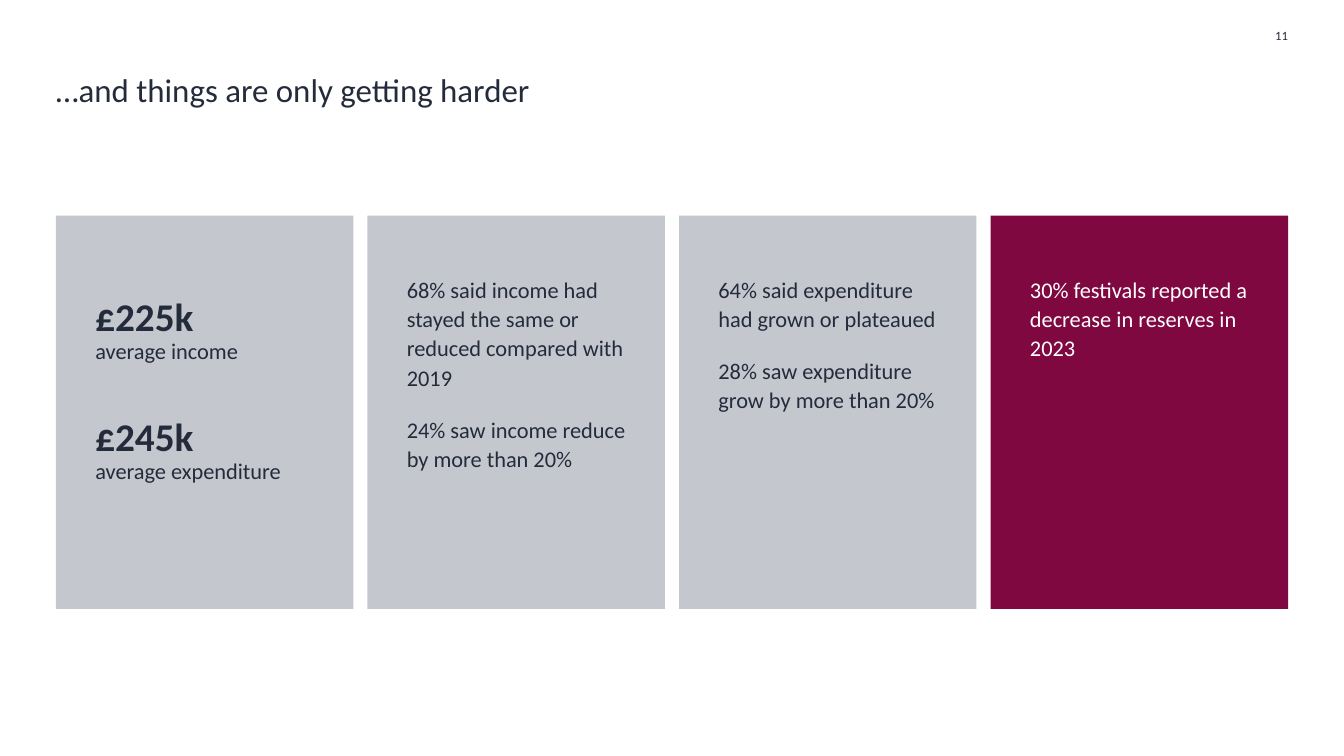
import pptx
import pptx.util
import pptx.dml.color
import pptx.enum.text
from lxml import etree

Inches, Pt = pptx.util.Inches, pptx.util.Pt
RGBColor = pptx.dml.color.RGBColor
PP_ALIGN, MSO_ANCHOR = pptx.enum.text.PP_ALIGN, pptx.enum.text.MSO_ANCHOR

INK = RGBColor(0x24, 0x2B, 0x3B)
GREY = RGBColor(0xC4, 0xC8, 0xCE)
PLUM = RGBColor(0x7E, 0x08, 0x3F)
WHITE = RGBColor(0xFF, 0xFF, 0xFF)

SLIDE_W, SLIDE_H = 13.33, 7.5
LEFT, CONTENT_W = 0.555, 12.22
CARD_TOP, CARD_H, GAP = 2.14, 3.9, 0.14

FIGURE = dict(size=28, bold=True, line=34, before=34)
LABEL = dict(size=16, bold=False, line=18, before=0)
POINT = dict(size=16, bold=False, line=21, before=16)

CARDS = [
    (GREY, INK, 0.75, [("£225k", FIGURE), ("average income", LABEL),
                       ("£245k", FIGURE), ("average expenditure", LABEL)]),
    (GREY, INK, 0.57, [
        ("68% said income had stayed the same or reduced compared with 2019", POINT),
        ("24% saw income reduce by more than 20%", POINT)]),
    (GREY, INK, 0.57, [
        ("64% said expenditure had grown or plateaued", POINT),
        ("28% saw expenditure grow by more than 20%", POINT)]),
    (PLUM, WHITE, 0.57, [
        ("30% festivals reported a decrease in reserves in 2023", POINT)]),
]


def set_all(obj, values):
    """Set each attribute named in a dict."""
    for name, value in values.items():
        setattr(obj, name, value)


def place(sp, box):
    """Move a shape to a box given in inches."""
    set_all(sp, dict(zip(("left", "top", "width", "height"), map(Inches, box))))


def set_frame(tf, anchor, insets=(0, 0, 0, 0)):
    """Set wrapping, anchor and insets of a text frame."""
    names = ("margin_left", "margin_top", "margin_right", "margin_bottom")
    set_all(tf, dict(zip(names, map(Inches, insets))))
    set_all(tf, dict(word_wrap=True, vertical_anchor=anchor,
                     auto_size=pptx.enum.text.MSO_AUTO_SIZE.NONE))


def write(p, text, size, color, bold=False, align=PP_ALIGN.LEFT):
    """Write one formatted run into a paragraph."""
    p.alignment = align
    r = p.add_run()
    r.text = text
    set_all(r.font, dict(name="Calibri", size=Pt(size), bold=bold))
    r.font.color.rgb = color


def add_title(s, box, text):
    """Fill and place the title placeholder."""
    sp = s.shapes.title
    place(sp, box)
    set_frame(sp.text_frame, MSO_ANCHOR.TOP)
    write(sp.text_frame.paragraphs[0], text, 23.5, INK)


def add_page_number(s, box, text):
    """Add the page number at the top right."""
    sp = s.shapes.add_textbox(*map(Inches, box))
    set_frame(sp.text_frame, MSO_ANCHOR.MIDDLE)
    write(sp.text_frame.paragraphs[0], text, 9, INK, align=PP_ALIGN.RIGHT)


def fill_card(sp, box, fill, color, top_inset, lines):
    """Turn a body placeholder into a coloured card of text."""
    place(sp, box)
    sp.fill.solid()
    sp.fill.fore_color.rgb = fill
    tf = sp.text_frame
    set_frame(tf, MSO_ANCHOR.TOP, (0.39, top_inset, 0.39, 0.5))
    for i, (text, style) in enumerate(lines):
        p = tf.add_paragraph() if i else tf.paragraphs[0]
        set_all(p, dict(line_spacing=Pt(style["line"]), space_after=Pt(0),
                        space_before=Pt(style["before"] if i else 0)))
        write(p, text, style["size"], color, style["bold"])
        pPr = p._p.get_or_add_pPr()
        pPr.set("marL", "0")
        pPr.set("indent", "0")
        etree.SubElement(pPr, pptx.oxml.ns.qn("a:buNone"))


def add_cards(s, box):
    """Spread the cards over equal columns of a box."""
    left, top, width, height = box
    card_w = (width - GAP * (len(CARDS) - 1)) / len(CARDS)
    bodies = [sp for sp in s.placeholders if sp.placeholder_format.idx]
    for i, (sp, card) in enumerate(zip(bodies, CARDS)):
        fill_card(sp, (left + i * (card_w + GAP), top, card_w, height), *card)


def main():
    """Build and save the slide."""
    prs = pptx.Presentation()
    set_all(prs, dict(slide_width=Inches(SLIDE_W), slide_height=Inches(SLIDE_H)))
    s = prs.slides.add_slide(prs.slide_layouts.get_by_name("Comparison"))
    add_title(s, (LEFT, 0.69, CONTENT_W, 0.4), "…and things are only getting harder")
    add_page_number(s, (LEFT + CONTENT_W - 0.53, 0.28, 0.53, 0.15), "11")
    add_cards(s, (LEFT, CARD_TOP, CONTENT_W, CARD_H))
    prs.save("out.pptx")


if __name__ == "__main__":
    main()
